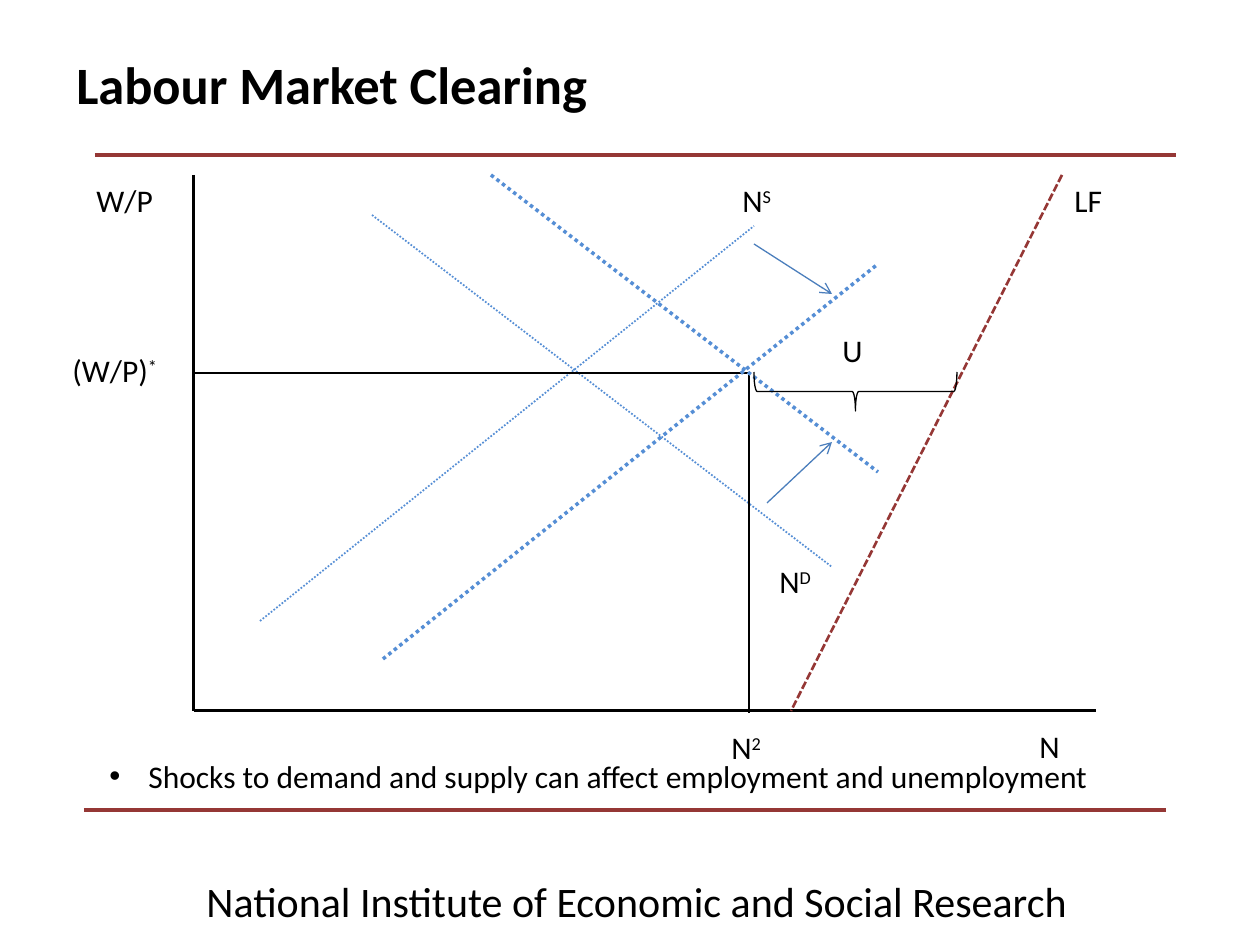
from pptx import Presentation
from pptx.dml.color import RGBColor
from pptx.enum.dml import MSO_LINE_DASH_STYLE as Dash
from pptx.enum.shapes import MSO_CONNECTOR, MSO_SHAPE
from pptx.enum.text import MSO_ANCHOR
from pptx.oxml.ns import qn
from pptx.util import Pt
from lxml.etree import SubElement

BLACK, RED, BLUE, STEEL = "000000", "953735", "558ED5", "4B7EBC"
DOT, DASH = Dash.ROUND_DOT, Dash.SQUARE_DOT
LEFT, TOP, BOTTOM = 194, 175, 711
WAGE, JOBS = 373, 749
LABEL_HEIGHT = 50

RULES = [(95, 155, 1176, 155), (84, 810, 1166, 810)]
AXES = [(LEFT, TOP, LEFT, BOTTOM), (LEFT, BOTTOM, 1096, BOTTOM)]
LABOUR_FORCE = [(1062, TOP, 791, BOTTOM)]
OLD_CURVES = [(372, 215, 832, 567), (260, 621, 754, 226)]
NEW_CURVES = [(383, 659, 878, 264), (491, TOP, 878, 472)]
EQUILIBRIUM = [(LEFT, WAGE, JOBS, WAGE), (JOBS, 375, JOBS, 713)]
SHIFTS = [(767, 503, 832, 442), (754, 244, 832, 294)]

LINE_GROUPS = [
    (RULES, RED, 2.25, None, False),
    (AXES, BLACK, 1.75, None, False),
    (LABOUR_FORCE, RED, 1.5, DASH, False),
    (OLD_CURVES, BLUE, 1, DOT, False),
    (EQUILIBRIUM, BLACK, 0.75, None, False),
    (SHIFTS, STEEL, 0.75, None, True),
    (NEW_CURVES, BLUE, 2, DOT, False),
]

LABELS = [
    ("W/P", "", 84, TOP, 110),
    ("N", "", 1027, 721, 69),
    ("N", "D", 767, 556, 149),
    ("LF", "", 1062, TOP, 93),
    ("N", "S", 730, TOP, 149),
    ("N", "2", 719, 722, 68),
    ("(W/P)", "*", 60, 345, 118),
    ("U", "", 830, 325, 52),
]
TITLE = "Labour Market Clearing"
FOOTER = "National Institute of Economic and Social Research"
MESSAGE = "Shocks to demand and supply can affect employment and unemployment"


def px(value):
    return round(value * 914400 / 126)


def colour(value):
    return RGBColor.from_string(value)


def add_line(slide, ends, hue, width, dash, arrow):
    line = slide.shapes.add_connector(MSO_CONNECTOR.STRAIGHT, *map(px, ends))
    line.line.color.rgb = colour(hue)
    line.line.width = Pt(width)
    if dash:
        line.line.dash_style = dash
    if arrow:
        SubElement(line.line._get_or_add_ln(), qn("a:tailEnd"), type="arrow")
    SubElement(line._element.spPr, qn("a:effectLst"))


def add_text(slide, place, text, raised="", size=18, bold=False,
             anchor=MSO_ANCHOR.TOP, bullet=False):
    frame = slide.shapes.add_textbox(*map(px, place)).text_frame
    frame.word_wrap = True
    frame.vertical_anchor = anchor
    paragraph = frame.paragraphs[0]
    if bullet:
        properties = paragraph._p.get_or_add_pPr()
        properties.set("marL", str(px(39)))
        properties.set("indent", str(px(-39)))
        SubElement(properties, qn("a:buFont"), typeface="Arial")
        SubElement(properties, qn("a:buChar"), char="•")
    for part in filter(None, (text, raised)):
        run = paragraph.add_run()
        run.text = part
        run.font.color.rgb = colour(BLACK)
        look = {"name": "Calibri", "size": Pt(size), "bold": bold}
        for key, value in look.items():
            setattr(run.font, key, value)
    if raised:
        run.font._element.set("baseline", "30000")


def add_brace(slide):
    brace = slide.shapes.add_shape(MSO_SHAPE.LEFT_BRACE, *map(px, (836, 290, 39, 203)))
    brace.rotation = 270
    brace.shadow.inherit = False
    brace.fill.background()
    brace.line.color.rgb = colour(BLACK)
    brace.line.width = Pt(0.75)


def main():
    deck = Presentation()
    deck.slide_width, deck.slide_height = px(1260), px(945)
    slide = deck.slides.add_slide(deck.slide_layouts[6])
    add_text(slide, (194, 869, 1002, LABEL_HEIGHT), FOOTER, size=24)
    add_text(slide, (64, 45, 1134, 77), TITLE, size=30, bold=True,
             anchor=MSO_ANCHOR.MIDDLE)
    for lines, *style in LINE_GROUPS:
        for ends in lines:
            add_line(slide, ends, *style)
    add_brace(slide)
    for text, raised, left, top, width in LABELS:
        add_text(slide, (left, top, width, LABEL_HEIGHT), text, raised)
    add_text(slide, (97, 751, 1013, LABEL_HEIGHT), MESSAGE, bullet=True)
    deck.save("out.pptx")


if __name__ == "__main__":
    main()
